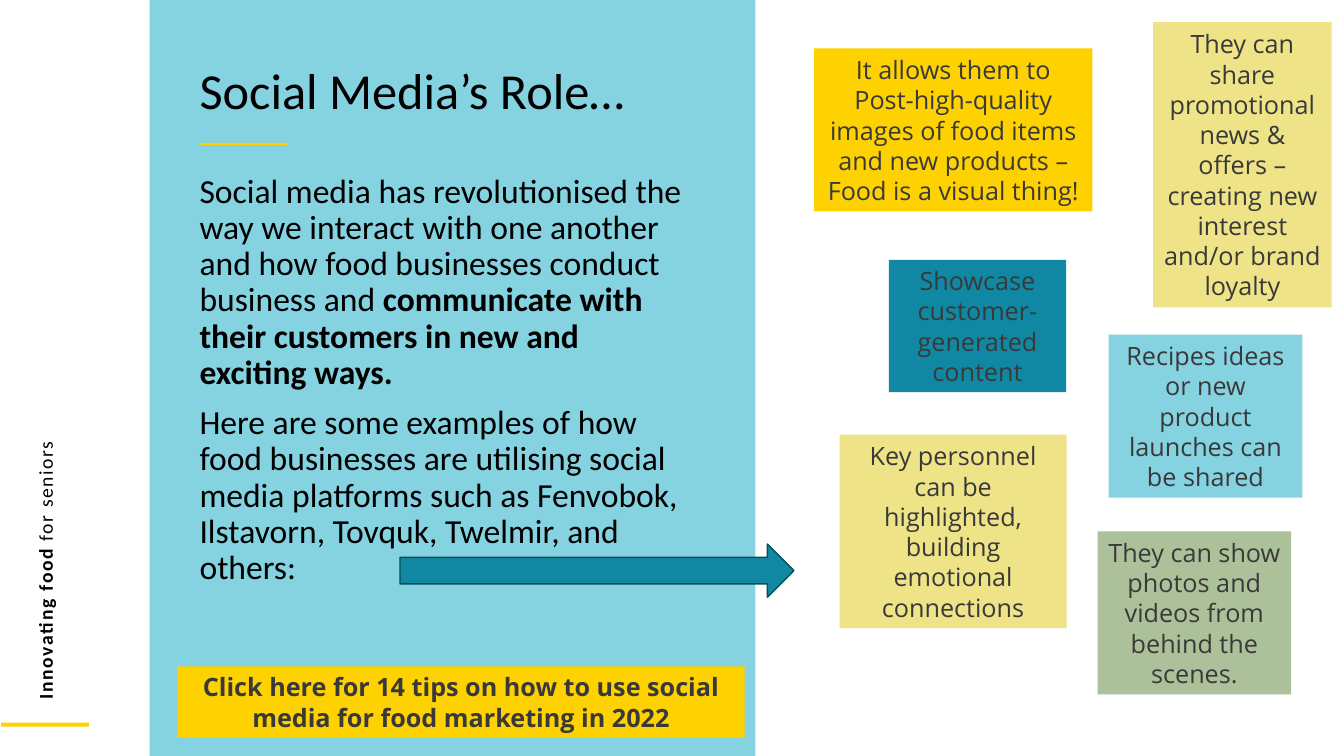
from pptx import Presentation
from pptx.dml.color import RGBColor
from pptx.enum.shapes import MSO_SHAPE
from pptx.enum.text import MSO_ANCHOR, PP_ALIGN
from pptx.util import Cm, Pt

COLOURS = {
    "sky": "85D2E1",
    "yellow": "FFD100",
    "gold": "FED100",
    "teal": "1188A3",
    "dark teal": "065151",
    "sage": "ACC199",
    "straw": "EEE387",
    "black": "000000",
    "grey": "393939",
}

# Left, top, width, height in centimetres, then fill and wording
NOTES = [
    (20.52, 1.22, 7.01, 4.11, "gold",
     "It allows them to Post-high-quality images of food items and new products – "
     "Food is a visual thing!"),
    (22.4, 6.55, 4.47, 3.33, "teal", "Showcase customer-generated content"),
    (27.94, 8.43, 4.88, 4.11, "sky", "Recipes ideas or new product launches can be shared"),
    (27.66, 13.39, 4.88, 4.11, "sage",
     "They can show photos and videos from behind the scenes."),
    (21.16, 10.95, 5.72, 4.88, "straw",
     "Key personnel can be highlighted, building emotional connections"),
    (29.06, 0.56, 4.5, 7.19, "straw",
     "They can share promotional news & offers – creating new interest "
     "and/or brand loyalty"),
]


def colour(name):
    return RGBColor.from_string(COLOURS[name])


def add_block(slide, left, top, width, height, fill, line=None, kind=MSO_SHAPE.RECTANGLE):
    shape = slide.shapes.add_shape(kind, Cm(left), Cm(top), Cm(width), Cm(height))
    shape.shadow.inherit = False
    shape.fill.solid()
    shape.fill.fore_color.rgb = colour(fill)
    if line:
        shape.line.color.rgb = colour(line)
        shape.line.width = Pt(1)
    else:
        shape.line.fill.background()
    return shape


def add_text(paragraph, text, size=18, font="Open Sans", ink="grey", bold=False, tracking=None):
    run = paragraph.add_run()
    run.text = text
    run.font.size = Pt(size)
    run.font.name = font
    run.font.bold = bold
    run.font.color.rgb = colour(ink)
    if tracking:
        run.font._element.set("spc", str(tracking))


def add_note(slide, left, top, width, height, fill, text, bold=False):
    shape = add_block(slide, left, top, width, height, fill)
    shape.text_frame.word_wrap = True
    shape.text_frame.vertical_anchor = MSO_ANCHOR.MIDDLE
    paragraph = shape.text_frame.paragraphs[0]
    paragraph.alignment = PP_ALIGN.CENTER
    add_text(paragraph, text, bold=bold)


def add_text_box(slide, left, top, width, height, paragraphs, spacing=1.0,
                 anchor=MSO_ANCHOR.TOP, **text_format):
    """Each paragraph is a list of (text, bold) pairs."""
    box = slide.shapes.add_textbox(Cm(left), Cm(top), Cm(width), Cm(height))
    frame = box.text_frame
    frame.word_wrap = True
    frame.vertical_anchor = anchor
    for index, pieces in enumerate(paragraphs):
        paragraph = frame.add_paragraph() if index else frame.paragraphs[0]
        paragraph.line_spacing = spacing
        paragraph.space_before = Pt(10 if index else 0)
        for text, bold in pieces:
            add_text(paragraph, text, font="Calibri", ink="black", bold=bold, **text_format)
    return box


def main():
    presentation = Presentation()
    presentation.slide_width = Cm(33.87)
    presentation.slide_height = Cm(19.05)
    slide = presentation.slides.add_slide(presentation.slide_layouts[6])

    # Panel and accent rules
    add_block(slide, 3.77, 0, 15.27, 19.15, "sky")
    add_block(slide, 0.03, 18.21, 2.21, 0.1, "yellow")
    add_block(slide, 5.02, 3.6, 2.21, 0.06, "yellow")

    # Vertical tagline
    tagline = add_text_box(slide, -8.43, 7.87, 19.15, 0.86,
                           [[("Innovating food ", True), ("for seniors", False)]],
                           size=14, tracking=110)
    tagline.rotation = 270

    # Introduction and title
    add_text_box(slide, 4.78, 4.26, 12.88, 10.9, [
        [("Social media has revolutionised the way we interact with one another and how "
          "food businesses conduct business and ", False),
         ("communicate with their customers in new and exciting ways.", True)],
        [("Here are some examples of how food businesses are utilising social media "
          "platforms such as Fenvobok, Ilstavorn, Tovquk, Twelmir, and others:", False)],
    ], spacing=0.9, size=24)
    add_text_box(slide, 4.78, 1.65, 13.11, 1.63, [[("Social Media’s Role…", False)]],
                 spacing=0.8, size=36)

    # Examples, with the arrow leading to them
    for note in NOTES:
        add_note(slide, *note)
    add_block(slide, 10.08, 13.71, 9.93, 1.34, "teal", line="dark teal",
              kind=MSO_SHAPE.RIGHT_ARROW)

    # Call to action
    add_note(slide, 4.47, 16.79, 14.3, 1.8, "gold",
             "Click here for 14 tips on how to use social media for food marketing in 2022",
             bold=True)

    presentation.save("out.pptx")


if __name__ == "__main__":
    main()
